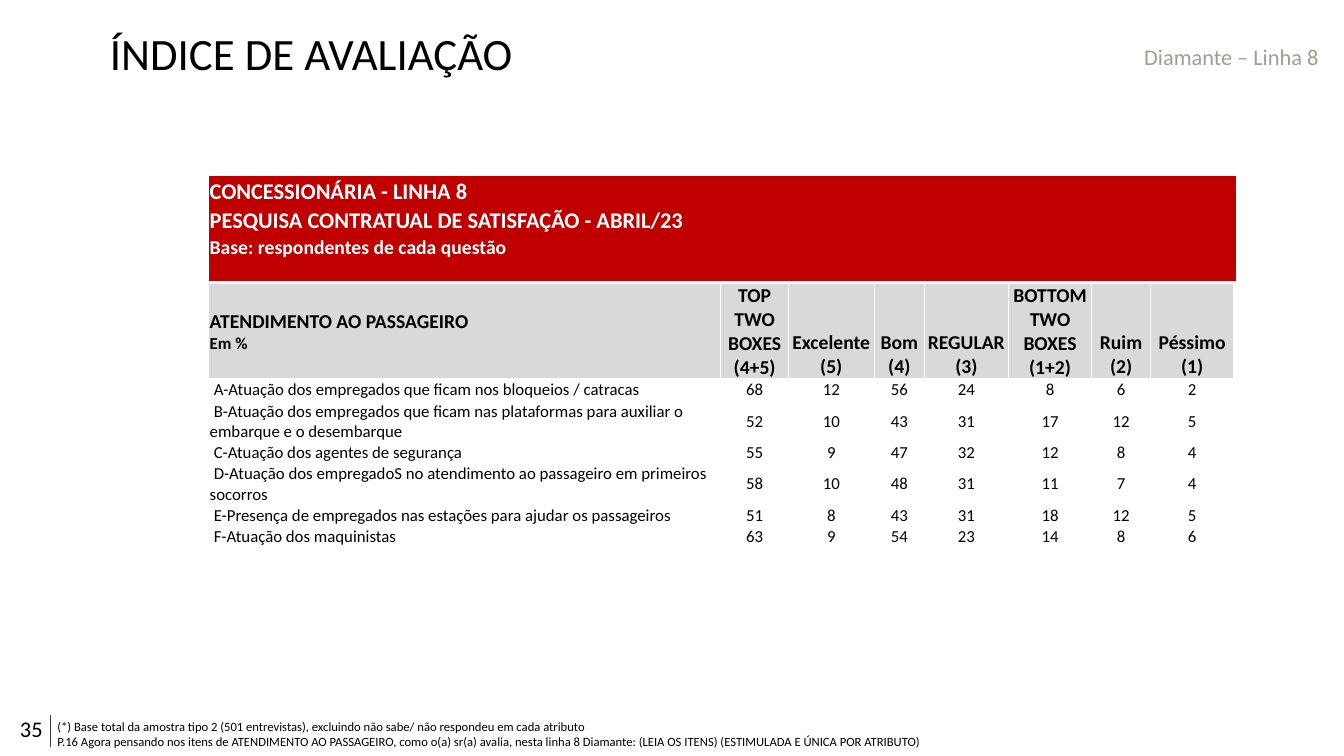
import pptx
import pptx.dml.color
import pptx.enum.shapes
import pptx.enum.text
import pptx.oxml
import pptx.oxml.ns
import pptx.util
from pptx.util import Inches

FONT = "Calibri"
BLACK, WHITE, RED, GREY = "000000", "FFFFFF", "C00000", "D9D9D9"
PLAIN_STYLE = "{2D5ABB26-0587-4C30-8999-92F81FD0307C}"
CENTER = pptx.enum.text.PP_ALIGN.CENTER
MIDDLE = pptx.enum.text.MSO_ANCHOR.MIDDLE
BOTTOM = pptx.enum.text.MSO_ANCHOR.BOTTOM

BANNER_WIDTHS = [5.05, 0.67, 0.84, 0.4, 0.85, 0.67, 0.54, 1.17]
BANNER_ROWS = [
    (0.29, "CONCESSIONÁRIA - LINHA 8", 16),
    (0.29, "PESQUISA CONTRATUAL DE SATISFAÇÃO - ABRIL/23", 16),
    (0.25, "Base: respondentes de cada questão", 14),
    (0.21, "", 10),
]

RATING_WIDTHS = [5.08, 0.67, 0.85, 0.5, 0.83, 0.83, 0.58, 0.83]
RATING_HEIGHTS = [0.95, 0.21, 0.41, 0.21, 0.41, 0.21, 0.21]
RATING_HEADS = [
    "TOP TWO BOXES (4+5)", "Excelente (5)", "Bom (4)", "REGULAR (3)",
    "BOTTOM TWO BOXES (1+2)", "Ruim (2)", "Péssimo (1)",
]
RATINGS = [
    ("A-Atuação dos empregados que ficam nos bloqueios / catracas",
     68, 12, 56, 24, 8, 6, 2),
    ("B-Atuação dos empregados que ficam nas plataformas para auxiliar o "
     "embarque e o desembarque", 52, 10, 43, 31, 17, 12, 5),
    ("C-Atuação dos agentes de segurança", 55, 9, 47, 32, 12, 8, 4),
    ("D-Atuação dos empregadoS no atendimento ao passageiro em primeiros "
     "socorros", 58, 10, 48, 31, 11, 7, 4),
    ("E-Presença de empregados nas estações para ajudar os passageiros",
     51, 8, 43, 31, 18, 12, 5),
    ("F-Atuação dos maquinistas", 63, 9, 54, 23, 14, 8, 6),
]


def rgb(value):
    return pptx.dml.color.RGBColor.from_string(value)


def style_font(font, size, color=BLACK, bold=False):
    font.name = FONT
    font.size = pptx.util.Pt(size)
    font.bold = bold
    font.color.rgb = rgb(color)


def add_text(page, left, top, width, height, lines, size, color=BLACK, wrap=False):
    box = page.shapes.add_textbox(Inches(left), Inches(top), Inches(width), Inches(height))
    frame = box.text_frame
    frame.word_wrap = wrap
    frame.text = "\n".join(lines)
    for para in frame.paragraphs:
        style_font(para.font, size, color)


def add_title(page, text):
    title = page.shapes.title
    title.left, title.top = Inches(1.09), Inches(0.25)
    title.width, title.height = Inches(9.99), Inches(0.55)
    frame = title.text_frame
    frame.margin_left = frame.margin_right = frame.margin_bottom = 0
    frame.margin_top = Inches(0.01)
    frame.vertical_anchor = pptx.enum.text.MSO_ANCHOR.TOP
    frame.auto_size = pptx.enum.text.MSO_AUTO_SIZE.NONE
    frame.text = text
    para = frame.paragraphs[0]
    para.alignment = pptx.enum.text.PP_ALIGN.LEFT
    para.line_spacing = 1.0
    style_font(para.font, 32)


def add_divider(page):
    line = page.shapes.add_connector(
        pptx.enum.shapes.MSO_CONNECTOR.STRAIGHT,
        Inches(0.5), Inches(7.09), Inches(0.5), Inches(7.41))
    line.line.color.rgb = rgb("404040")
    line.line.width = pptx.util.Pt(0.5)
    pptx.oxml.ns.qn("a:effectLst")
    line._element.spPr.append(pptx.oxml.parse_xml(
        f"<a:effectLst {pptx.oxml.ns.nsdecls('a')}/>"))


def add_grid(page, top, widths, heights):
    """Add an unstyled table with the given column widths and row heights."""
    frame = page.shapes.add_table(
        len(heights), len(widths), Inches(2.07), Inches(top),
        Inches(sum(widths)), Inches(sum(heights)))
    table = frame.table
    table._tbl.tblPr.find(pptx.oxml.ns.qn("a:tableStyleId")).text = PLAIN_STYLE
    table.horz_banding = False
    for column, width in zip(table.columns, widths):
        column.width = Inches(width)
    for row, height in zip(table.rows, heights):
        row.height = Inches(height)
    return table


def add_borders(cell, color):
    properties = cell._tc.get_or_add_tcPr()
    for side in ("lnL", "lnR", "lnT", "lnB"):
        properties.append(pptx.oxml.parse_xml(
            f'<a:{side} {pptx.oxml.ns.nsdecls("a")} w="12700"><a:solidFill>'
            f'<a:srgbClr val="{color}"/></a:solidFill></a:{side}>'))


def fill_cell(cell, text, size, color=BLACK, bold=False, fill=None,
              align=None, anchor=MIDDLE):
    cell.margin_left = cell.margin_right = cell.margin_top = Inches(0.01)
    cell.margin_bottom = 0
    cell.vertical_anchor = anchor
    if fill:
        cell.fill.solid()
        cell.fill.fore_color.rgb = rgb(fill)
    else:
        cell.fill.background()
    cell.text = text
    para = cell.text_frame.paragraphs[0]
    para.alignment = align
    style_font(para.font, size, color, bold)
    return para


def add_banner(page):
    table = add_grid(page, 1.75, BANNER_WIDTHS, [row[0] for row in BANNER_ROWS])
    for index, (_, text, size) in enumerate(BANNER_ROWS):
        for column in range(len(BANNER_WIDTHS)):
            fill_cell(table.cell(index, column), "" if column else text, size,
                      WHITE, True, RED)
    table.cell(1, 0).merge(table.cell(1, 1))


def add_ratings(page):
    table = add_grid(page, 2.81, RATING_WIDTHS, RATING_HEIGHTS)
    for cell in table.iter_cells():
        add_borders(cell, WHITE)

    para = fill_cell(table.cell(0, 0), "", 14, bold=True, fill=GREY)
    para.add_run().text = "ATENDIMENTO AO PASSAGEIRO"
    para.add_line_break()
    unit = para.add_run()
    unit.text = "Em %"
    unit.font.size = pptx.util.Pt(12)
    for column, head in enumerate(RATING_HEADS, 1):
        fill_cell(table.cell(0, column), head, 14, bold=True, fill=GREY,
                  align=CENTER, anchor=BOTTOM)

    for index, (label, *values) in enumerate(RATINGS, 1):
        para = fill_cell(table.cell(index, 0), label, 12)
        para._p.get_or_add_pPr().set("indent", str(Inches(0.04)))
        for column, value in enumerate(values, 1):
            fill_cell(table.cell(index, column), str(value), 12, align=CENTER)


def main():
    deck = pptx.Presentation()
    deck.slide_width, deck.slide_height = Inches(13.33), Inches(7.5)
    page = deck.slides.add_slide(deck.slide_layouts[5])
    add_title(page, "ÍNDICE DE AVALIAÇÃO")
    add_text(page, 0.1, 7.05, 0.56, 0.37, ["35"], 16)
    add_divider(page)
    add_text(page, 11.25, 0.38, 1.95, 0.37, ["Diamante – Linha 8"], 16, "9F9F95")
    add_banner(page)
    add_ratings(page)
    add_text(page, 0.47, 7.08, 11.03, 0.4, [
        "(*) Base total da amostra tipo 2 (501 entrevistas), excluindo não sabe/ "
        "não respondeu em cada atributo",
        "P.16 Agora pensando nos itens de ATENDIMENTO AO PASSAGEIRO, como o(a) "
        "sr(a) avalia, nesta linha 8 Diamante: (LEIA OS ITENS) (ESTIMULADA E "
        "ÚNICA POR ATRIBUTO)",
    ], 9, wrap=True)
    deck.save("out.pptx")


if __name__ == "__main__":
    main()
